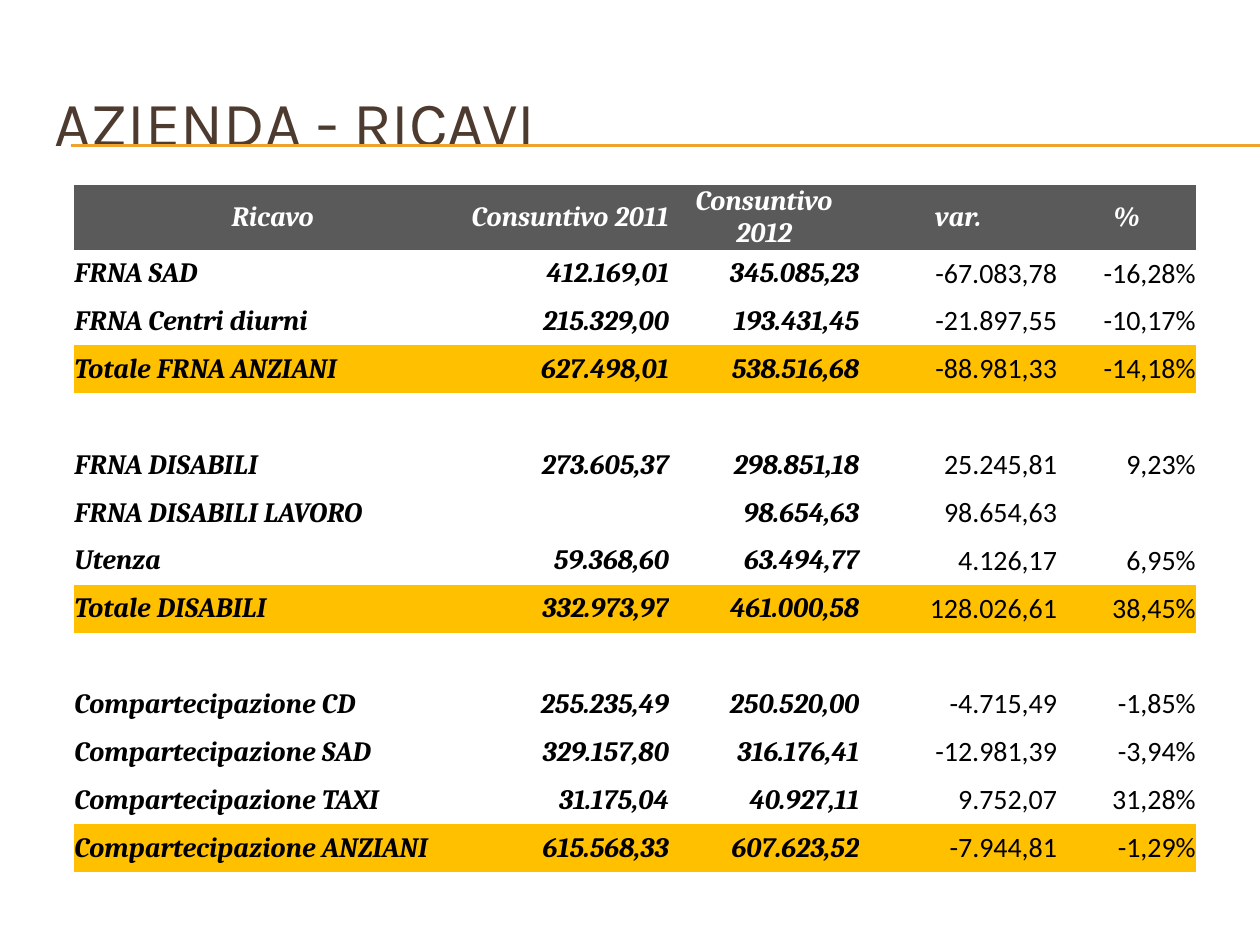
import pptx
import pptx.util
import pptx.dml.color
import pptx.enum.shapes
import pptx.enum.text
import pptx.oxml.ns
import lxml.etree

WIDTH, HEIGHT = 10, 7.5
AMBER, GREY = "FFC000", "5A5A5A"
COLUMNS = [3.15, 1.57, 1.51, 1.57, 1.1]
HEADER_HEIGHT, ROW_HEIGHT = 0.24, 0.38
PLAIN_STYLE = "{2D5ABB26-0587-4C30-8999-92F81FD0307C}"
STRONG = {"name": "Cambria", "size": pptx.util.Pt(16), "bold": True, "italic": True}
NORMAL = {"name": "Calibri", "size": pptx.util.Pt(16), "bold": False, "italic": False}
TITLE = {"name": "Karla", "size": pptx.util.Pt(36), "bold": False}
ROWS = [
    ["Ricavo", "Consuntivo 2011", "Consuntivo 2012", "var.", "%"],
    ["FRNA SAD", "412.169,01", "345.085,23", "-67.083,78", "-16,28%"],
    ["FRNA Centri diurni", "215.329,00", "193.431,45", "-21.897,55", "-10,17%"],
    ["Totale FRNA ANZIANI", "627.498,01", "538.516,68", "-88.981,33", "-14,18%"],
    [""] * 5,
    ["FRNA DISABILI", "273.605,37", "298.851,18", "25.245,81", "9,23%"],
    ["FRNA DISABILI LAVORO", "", "98.654,63", "98.654,63", ""],
    ["Utenza", "59.368,60", "63.494,77", "4.126,17", "6,95%"],
    ["Totale DISABILI", "332.973,97", "461.000,58", "128.026,61", "38,45%"],
    [""] * 5,
    ["Compartecipazione CD", "255.235,49", "250.520,00", "-4.715,49", "-1,85%"],
    ["Compartecipazione SAD", "329.157,80", "316.176,41", "-12.981,39", "-3,94%"],
    ["Compartecipazione TAXI", "31.175,04", "40.927,11", "9.752,07", "31,28%"],
    ["Compartecipazione ANZIANI", "615.568,33", "607.623,52", "-7.944,81", "-1,29%"],
]
TOTAL_ROWS = {3, 8, 13}


def color(value):
    """Turn a hex string into a colour."""
    return pptx.dml.color.RGBColor.from_string(value)


def set_all(target, values):
    """Set each named attribute on the target."""
    for name, value in values.items():
        setattr(target, name, value)


def write(p, text, font, hex_color, align):
    """Put one formatted run into a paragraph."""
    p.alignment = align
    r = p.add_run()
    r.text = text
    set_all(r.font, font)
    r.font.color.rgb = color(hex_color)


def add_rule(s, y):
    """Draw a thin line from the left margin to the slide's right edge."""
    line = s.shapes.add_connector(
        pptx.enum.shapes.MSO_CONNECTOR.STRAIGHT,
        *map(pptx.util.Inches, (0.56, y, WIDTH, y)))
    line.line.color.rgb = color("F0A22E")
    line.line.width = pptx.util.Pt(0.75)
    lxml.etree.SubElement(line._element.spPr, pptx.oxml.ns.qn("a:effectLst"))


def add_title(s, text):
    """Move the title placeholder and fill it."""
    sp = s.shapes.title
    box = {"left": 0.33, "top": 0.5, "width": 9.5, "height": 0.92}
    set_all(sp, {name: pptx.util.Inches(v) for name, v in box.items()})
    tf = sp.text_frame
    tf.vertical_anchor = pptx.enum.text.MSO_ANCHOR.MIDDLE
    write(tf.paragraphs[0], text, TITLE, "4E3B30", pptx.enum.text.PP_ALIGN.LEFT)


def fill_cell(cell, text, row, column):
    """Format a cell by its row's role and its column."""
    margins = ("margin_left", "margin_right", "margin_top", "margin_bottom")
    set_all(cell, dict.fromkeys(margins, 0))
    cell.vertical_anchor = pptx.enum.text.MSO_ANCHOR.MIDDLE
    if row == 0 or row in TOTAL_ROWS:
        cell.fill.solid()
        cell.fill.fore_color.rgb = color(AMBER if row else GREY)
    else:
        cell.fill.background()
    p = cell.text_frame.paragraphs[0]
    p.font.size = pptx.util.Pt(16)
    if text:
        aligns = pptx.enum.text.PP_ALIGN
        body_align = aligns.RIGHT if column else aligns.LEFT
        write(p, text, STRONG if row == 0 or column < 3 else NORMAL,
              "000000" if row else "FFFFFF", body_align if row else aligns.CENTER)


def add_revenue_table(s):
    """Build the revenue table."""
    height = HEADER_HEIGHT + ROW_HEIGHT * (len(ROWS) - 1)
    frame = s.shapes.add_table(
        len(ROWS), len(COLUMNS),
        *map(pptx.util.Inches, (0.59, 1.47, sum(COLUMNS), height)))
    table = frame.table
    table.horz_banding = False
    table._tbl.tblPr.find(pptx.oxml.ns.qn("a:tableStyleId")).text = PLAIN_STYLE
    for column, width in zip(table.columns, COLUMNS):
        column.width = pptx.util.Inches(width)
    for i, texts in enumerate(ROWS):
        table.rows[i].height = pptx.util.Inches(ROW_HEIGHT if i else HEADER_HEIGHT)
        for j, text in enumerate(texts):
            fill_cell(table.cell(i, j), text, i, j)


def main():
    """Build the slide and save it."""
    prs = pptx.Presentation()
    prs.slide_width = pptx.util.Inches(WIDTH)
    prs.slide_height = pptx.util.Inches(HEIGHT)
    s = prs.slides.add_slide(prs.slide_layouts[5])
    for y in (1.15, 1.16):
        add_rule(s, y)
    add_title(s, "AZIENDA - RICAVI")
    add_revenue_table(s)
    prs.save("out.pptx")


if __name__ == "__main__":
    main()
